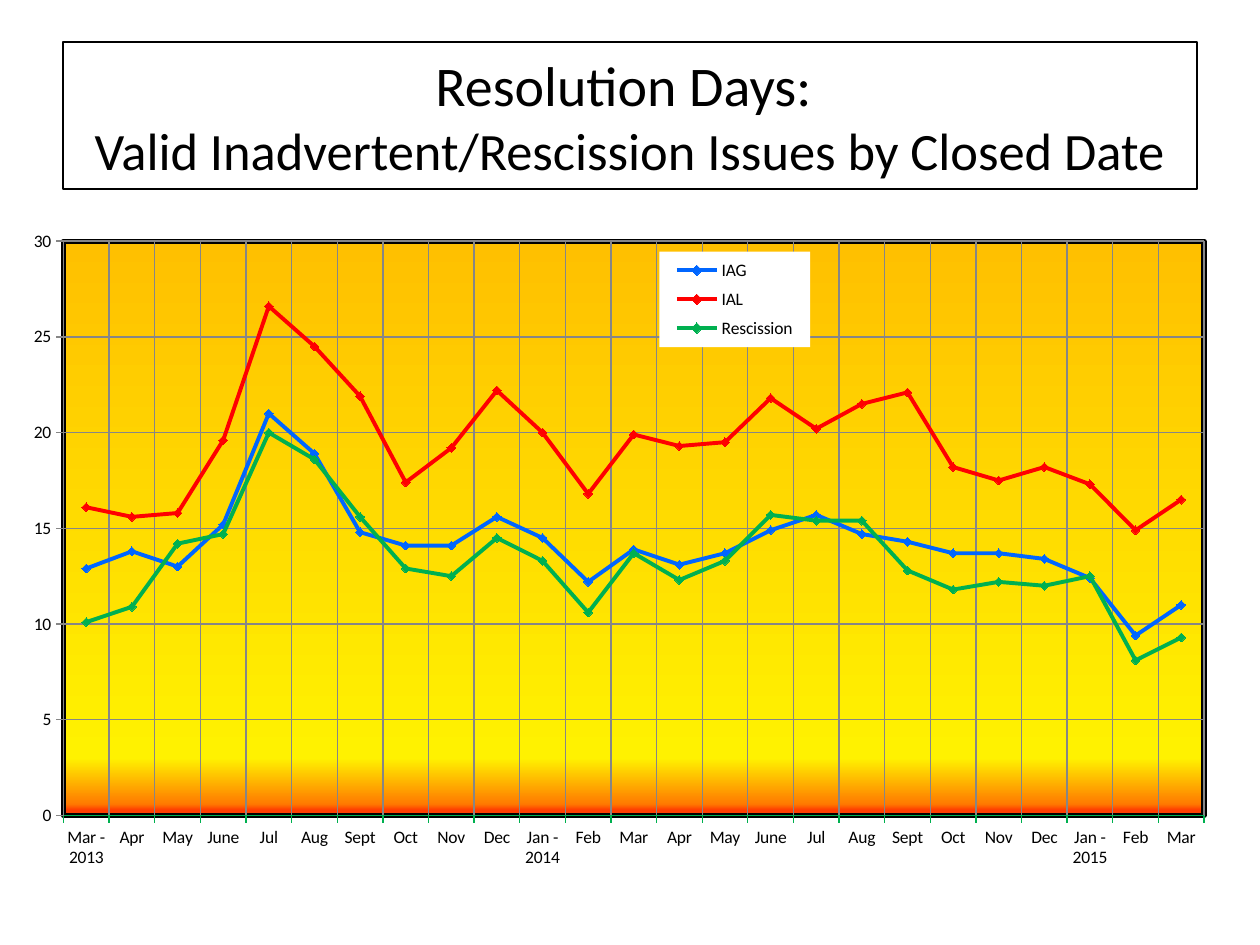
from pptx import Presentation
from pptx import util as u
from pptx.chart.data import CategoryChartData
from pptx.dml.color import RGBColor
from pptx.enum import chart as ch, shapes, text
from pptx.oxml import parse_xml
from pptx.oxml.ns import nsdecls

PX = 914400 // 126


def color(hex_value):
    return RGBColor.from_string(hex_value)


def add_text(paragraph, content, size=30, font="Calibri", fill="000000"):
    run = paragraph.add_run()
    run.text = content
    run.font.size = u.Pt(size)
    run.font.name = font
    run.font.color.rgb = color(fill)


prs = Presentation()
prs.slide_width, prs.slide_height = 1260 * PX, 945 * PX
slide = prs.slides.add_slide(prs.slide_layouts[6])

# Title in a thin frame
title = slide.shapes.add_shape(shapes.MSO_SHAPE.RECTANGLE, 63 * PX, 42 * PX, 1134 * PX, 147 * PX)
title.shadow.inherit = False
title.fill.background()
title.line.color.rgb = color("000000")
title.line.width = u.Pt(0.75)
title.text_frame.word_wrap = True
title.text_frame.vertical_anchor = text.MSO_ANCHOR.MIDDLE
heading = title.text_frame.paragraphs[0]
heading.alignment = text.PP_ALIGN.CENTER
add_text(heading, "Resolution Days: ", size=32)
heading.add_line_break()
add_text(heading, "Valid Inadvertent/Rescission Issues by Closed Date")

# Monthly resolution days
months = ["Apr", "May", "June", "Jul", "Aug", "Sept", "Oct", "Nov", "Dec"]
data = CategoryChartData()
data.categories = (["Mar - 2013", *months, "Jan - 2014", "Feb", "Mar",
                    *months, "Jan - 2015", "Feb", "Mar"])
issues = [
    ("IAG", "0066FF", [12.9, 13.8, 13, 15.2, 21, 18.9, 14.8, 14.1, 14.1, 15.6, 14.5, 12.2, 13.9,
                       13.1, 13.7, 14.9, 15.7, 14.7, 14.3, 13.7, 13.7, 13.4, 12.4, 9.4, 11]),
    ("IAL", "FF0000", [16.1, 15.6, 15.8, 19.6, 26.6, 24.5, 21.9, 17.4, 19.2, 22.2, 20, 16.8, 19.9,
                       19.3, 19.5, 21.8, 20.2, 21.5, 22.1, 18.2, 17.5, 18.2, 17.3, 14.9, 16.5]),
    ("Rescission", "00B050", [10.1, 10.9, 14.2, 14.7, 20, 18.6, 15.6, 12.9, 12.5, 14.5, 13.3, 10.6,
                              13.7, 12.3, 13.3, 15.7, 15.4, 15.4, 12.8, 11.8, 12.2, 12, 12.5, 8.1,
                              9.3]),
]
for name, _, days in issues:
    data.add_series(name, days)
chart = slide.shapes.add_chart(ch.XL_CHART_TYPE.LINE_MARKERS, 21 * PX, 210 * PX,
                               1216 * PX, 693 * PX, data).chart
chart.has_title = False
chart.font.size = u.Pt(10)
chart.font.name = "Calibri"
chart.font.color.rgb = color("000000")
chart.plots[0].vary_by_categories = False

# Lines and markers
for line, (_, hue, _) in zip(chart.plots[0].series, issues):
    line.smooth = False
    line.format.line.color.rgb = color(hue)
    line.format.line.width = u.Pt(2.25)
    line.marker.style = ch.XL_MARKER_STYLE.DIAMOND
    line.marker.size = 5
    line.marker.format.fill.solid()
    line.marker.format.fill.fore_color.rgb = color(hue)
    line.marker.format.line.color.rgb = color(hue)

# Axes and grid
for axis, hue in ((chart.category_axis, "00B050"), (chart.value_axis, "868686")):
    axis.has_major_gridlines = True
    axis.major_gridlines.format.line.color.rgb = color("868686")
    axis.major_gridlines.format.line.width = u.Pt(0.75)
    axis.major_tick_mark = ch.XL_TICK_MARK.OUTSIDE
    axis.format.line.color.rgb = color(hue)
    axis.format.line.width = u.Pt(0.75)
chart.value_axis.minimum_scale = 0
chart.value_axis.maximum_scale = 30
chart.value_axis.major_unit = 5

# Legend inside the plot
chart.has_legend = True
chart.legend.position = ch.XL_LEGEND_POSITION.RIGHT
chart.legend.include_in_layout = False
chart.legend.font.size = u.Pt(10)
legend = chart.element.xpath(".//c:legend")[0]
legend.xpath("c:txPr")[0].addprevious(parse_xml(
    f'<c:spPr {nsdecls("c", "a")}><a:solidFill><a:srgbClr val="FFFFFF"/></a:solidFill></c:spPr>'))

# Plot background: gradient with a black border
plot_area = chart.element.xpath(".//c:plotArea")[0]
stops = "".join(f'<a:gs pos="{at * 1000}"><a:srgbClr val="{hue}"/></a:gs>' for at, hue in
                ((0, "FFC000"), (90, "FFF200"), (98, "FF7A00"), (99, "FF3F00")))
plot_area.append(parse_xml(
    f'<c:spPr {nsdecls("c", "a")}><a:gradFill><a:gsLst>{stops}</a:gsLst>'
    '<a:lin ang="5400000" scaled="0"/></a:gradFill><a:ln w="38100"><a:solidFill>'
    '<a:srgbClr val="000000"/></a:solidFill></a:ln></c:spPr>'))

# Manual places of plot and legend, as shares of the chart
for part, index, target, place in (
        (plot_area, 0, '<c:layoutTarget val="inner"/>', (0.035, 0.045, 0.938, 0.829)),
        (legend, 1, "", (0.525, 0.06, 0.124, 0.138))):
    for automatic in part.xpath("c:layout"):
        part.remove(automatic)
    modes = '<c:xMode val="edge"/><c:yMode val="edge"/>'
    sides = "".join(f'<c:{side} val="{share}"/>' for side, share in zip("xywh", place))
    part.insert(index, parse_xml(
        f'<c:layout {nsdecls("c")}><c:manualLayout>{target}{modes}{sides}'
        '</c:manualLayout></c:layout>'))

prs.save("out.pptx")
